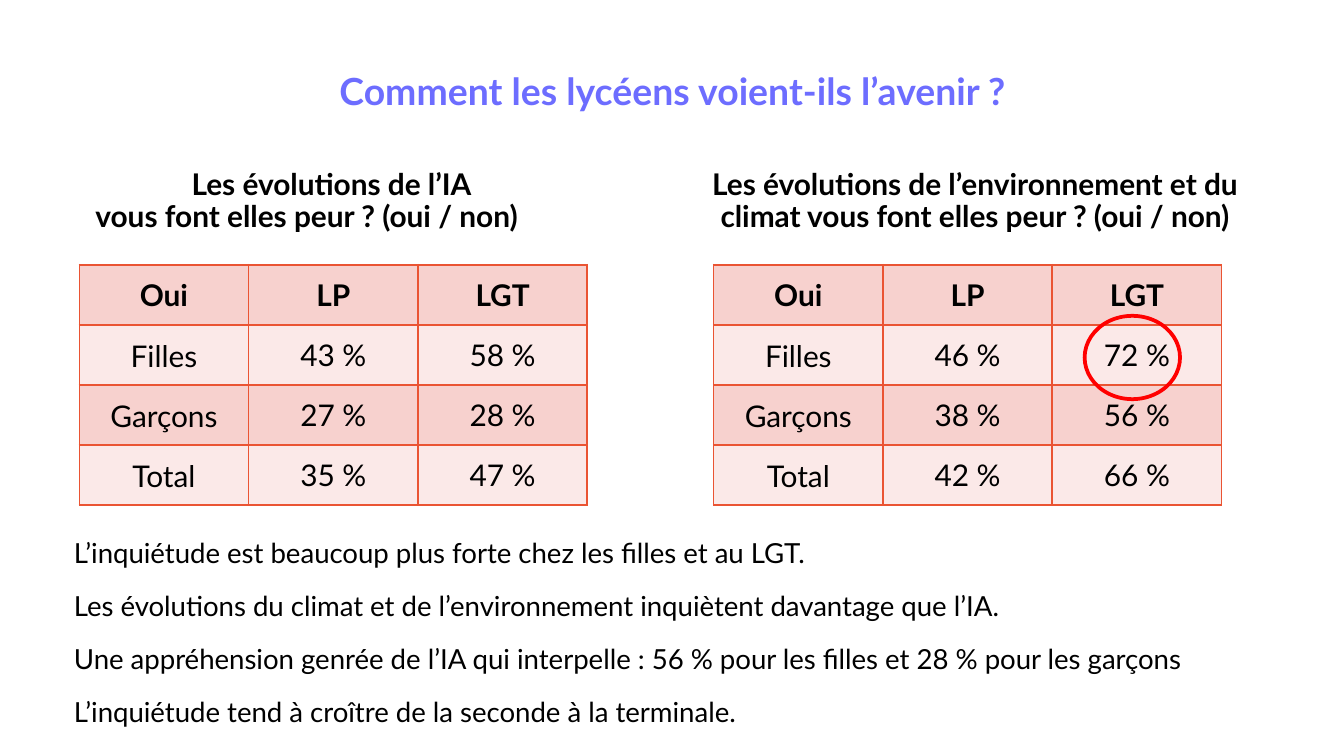
import pptx
import pptx.util
import pptx.dml.color
import pptx.enum.shapes
import pptx.enum.text
import pptx.oxml
import pptx.oxml.ns

Inches = pptx.util.Inches
Pt = pptx.util.Pt
RGB = pptx.dml.color.RGBColor.from_string
ALIGN = pptx.enum.text.PP_ALIGN
MIDDLE = pptx.enum.text.MSO_ANCHOR.MIDDLE
COLORS = {"title": "6D6DFF", "text": "000000", "border": "EA5433",
          "dark": "F7D1CE", "light": "FBE9E8", "ring": "FF0000"}


def style(par, size, color="text", bold=False, align=ALIGN.CENTER, space=None):
    par.alignment = align
    par.line_spacing = space
    for run in par.runs:
        run.font.name = "Lato"
        run.font.size = Pt(size)
        run.font.bold = bold
        run.font.color.rgb = RGB(COLORS[color])


def frame(left, top, width, height):
    box = slide.shapes.add_textbox(Inches(left), Inches(top), Inches(width), Inches(height))
    text = box.text_frame
    text.word_wrap = True
    text.vertical_anchor = MIDDLE
    text.margin_left = Inches(0.12)
    return text


deck = pptx.Presentation()
deck.slide_width = Inches(10)
deck.slide_height = Inches(10) * 9 // 16
slide = deck.slides.add_slide(deck.slide_layouts[5])

title = slide.shapes.title
title.left, title.top = Inches(0.43), Inches(0.37)
title.width, title.height = Inches(9.13), Inches(0.94)
title.text_frame.text = "Comment les lycéens voient-ils l’avenir ?"
title.text_frame.vertical_anchor = MIDDLE
title.text_frame.margin_left = Inches(0.12)
title.text_frame.margin_bottom = Inches(0.34)
style(title.text_frame.paragraphs[0], 20, "title", True, space=0.9)

heads = [
    (0.59, 3.78, [("Les évolutions de l’IA ", ALIGN.CENTER),
                  ("vous font elles peur ? (oui / non)", ALIGN.LEFT)]),
    (4.92, 4.65, [("Les évolutions de l’environnement et du climat "
                   "vous font elles peur ? (oui / non)", ALIGN.CENTER)]),
]
for left, width, lines in heads:
    text = frame(left, 1.03, width, 0.94)
    text.text = "\n".join(line for line, align in lines)
    for par, (line, align) in zip(text.paragraphs, lines):
        style(par, 16, bold=True, align=align, space=0.9)

labels = ["Filles", "Garçons", "Total"]
tables = [
    (0.59, [(43, 58), (27, 28), (35, 47)]),
    (5.31, [(46, 72), (38, 56), (42, 66)]),
]
for left, values in tables:
    rows = [["Oui", "LP", "LGT"]]
    for label, pair in zip(labels, values):
        rows.append([label] + [f"{value} %" for value in pair])
    grid = slide.shapes.add_table(4, 3, Inches(left), Inches(1.97),
                                  Inches(3.78), Inches(1.79)).table
    for r, row in enumerate(rows):
        for c, word in enumerate(row):
            cell = grid.cell(r, c)
            cell.text_frame.text = word
            cell.vertical_anchor = MIDDLE
            if r and c == 0:
                cell.margin_left = cell.margin_right = cell.margin_top = Inches(0.01)
                cell.margin_bottom = 0
            style(cell.text_frame.paragraphs[0], 16, bold=r == 0)
            props = cell._tc.get_or_add_tcPr()
            for side in ("lnL", "lnR", "lnT", "lnB"):
                props.append(pptx.oxml.parse_xml(
                    f'<a:{side} {pptx.oxml.ns.nsdecls("a")} w="{Pt(1)}"><a:solidFill>'
                    f'<a:srgbClr val="{COLORS["border"]}"/></a:solidFill></a:{side}>'))
            cell.fill.solid()
            cell.fill.fore_color.rgb = RGB(COLORS["light" if r % 2 else "dark"])

notes = [
    "L’inquiétude est beaucoup plus forte chez les filles et au LGT.",
    "Les évolutions du climat et de l’environnement inquiètent davantage que l’IA.",
    "Une appréhension genrée de l’IA qui interpelle : 56 % pour les filles et 28 % pour les garçons",
    "L’inquiétude tend à croître de la seconde à la terminale.",
]
text = frame(0.43, 3.91, 9.45, 1.63)
text.text = "\n".join(notes)
for i, par in enumerate(text.paragraphs):
    style(par, 14.8, align=ALIGN.LEFT, space=0.8)
    if i:
        par.space_before = Pt(14.2)

ring = slide.shapes.add_shape(pptx.enum.shapes.MSO_SHAPE.OVAL, Inches(8.07),
                              Inches(2.35), Inches(0.71), Inches(0.62))
ring.shadow.inherit = False
ring.fill.background()
ring.line.color.rgb = RGB(COLORS["ring"])
ring.line.width = Pt(2)

deck.save("out.pptx")
